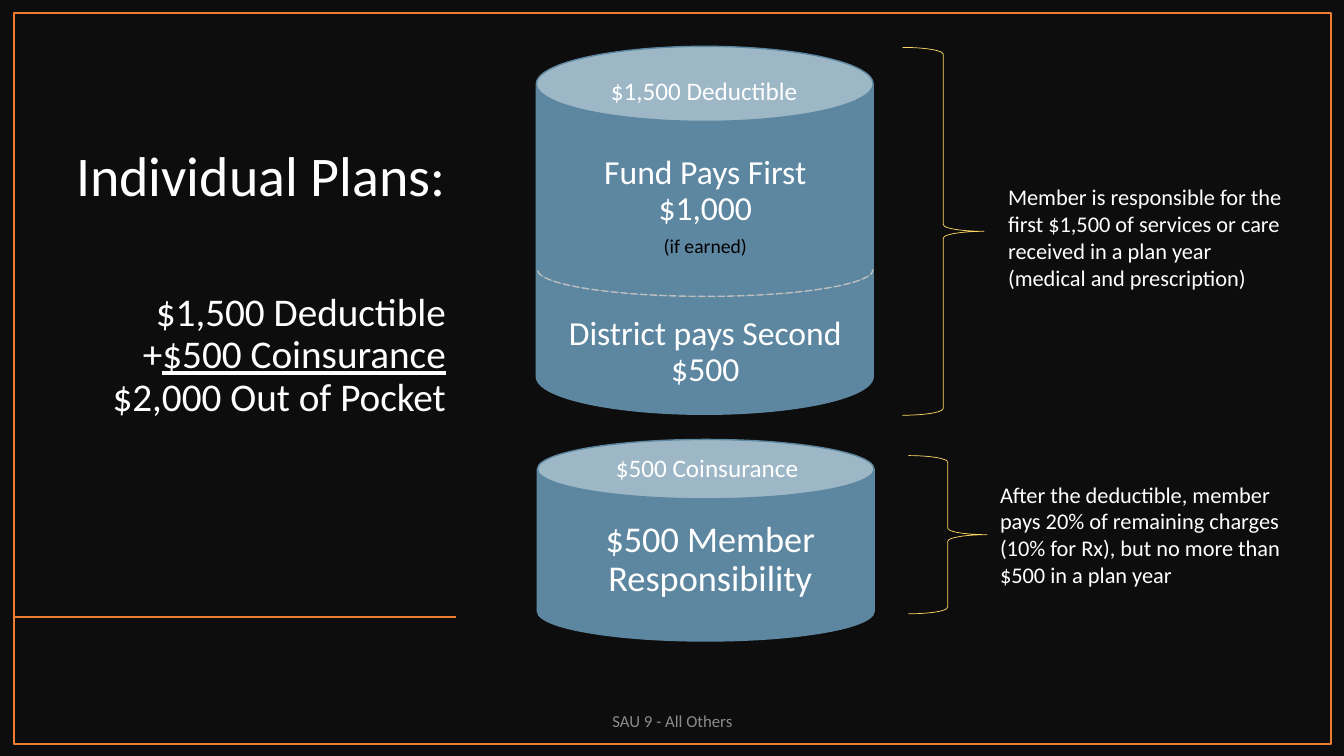
from pptx import Presentation
from pptx.dml.color import RGBColor
from pptx.enum.dml import MSO_LINE
from pptx.enum.shapes import MSO_CONNECTOR, MSO_SHAPE
from pptx.enum.text import MSO_ANCHOR, PP_ALIGN
from pptx.util import Inches, Pt
from lxml import etree

COLORS = {
    "night": "0D0D0D",
    "white": "FFFFFF",
    "black": "000000",
    "orange": "ED7D31",
    "steel": "5D87A1",
    "gold": "FFD966",
    "silver": "BFBFBF",
    "gray": "8C8C8C",
}

prs = Presentation()
prs.slide_width, prs.slide_height = Inches(13.33), Inches(7.5)
slide = prs.slides.add_slide(prs.slide_layouts[6])


def add_outline(kind, box, fill=None, line=None, width=1):
    shape = slide.shapes.add_shape(kind, *map(Inches, box))
    shape.shadow.inherit = False
    if fill:
        shape.fill.solid()
        shape.fill.fore_color.rgb = RGBColor.from_string(COLORS[fill])
    else:
        shape.fill.background()
    if line:
        shape.line.color.rgb = RGBColor.from_string(COLORS[line])
        shape.line.width = Pt(width)
    else:
        shape.line.fill.background()
    return shape


def add_text(box, lines, align=PP_ALIGN.LEFT, anchor=MSO_ANCHOR.TOP):
    frame = slide.shapes.add_textbox(*map(Inches, box)).text_frame
    frame.word_wrap = True
    frame.vertical_anchor = anchor
    for index, (text, size, color, spacing, after) in enumerate(lines):
        paragraph = frame.paragraphs[0] if index == 0 else frame.add_paragraph()
        paragraph.text = text
        paragraph.alignment = align
        paragraph.line_spacing = spacing
        paragraph.space_after = Pt(after)
        paragraph.font.name = "Calibri"
        paragraph.font.size = Pt(size)
        paragraph.font.color.rgb = RGBColor.from_string(COLORS[color])
    return frame


add_outline(MSO_SHAPE.RECTANGLE, (0, 0, 13.33, 7.5), fill="night")

plan_summary = add_text((0.63, 1.42, 3.89, 2.85), [
    ("Individual Plans:", 40, "white", 0.9, 60),
    ("$1,500 Deductible", 28, "white", 0.9, 0),
    ("+", 28, "white", 0.9, 0),
    ("$2,000 Out of Pocket", 28, "white", 0.9, 0),
], PP_ALIGN.RIGHT)
coinsurance = plan_summary.paragraphs[2].add_run()
coinsurance.text = "$500 Coinsurance"
coinsurance.font.underline = True

divider = slide.shapes.add_connector(
    MSO_CONNECTOR.STRAIGHT, Inches(4.52), Inches(6.12), Inches(0.14), Inches(6.12))
divider.line.color.rgb = RGBColor.from_string(COLORS["orange"])
divider.line.width = Pt(1)
etree.SubElement(
    divider.element.spPr,
    "{http://schemas.openxmlformats.org/drawingml/2006/main}effectLst")

add_outline(MSO_SHAPE.RECTANGLE, (0.14, 0.13, 13.06, 7.25), line="orange")

for can_box, lid, brace_box in [
    ((5.33, 4.36, 3.34, 2), 0.295, (9.01, 4.52, 0.78, 1.57)),
    ((5.32, 0.46, 3.34, 3.65), 0.223, (8.95, 0.47, 0.81, 3.65)),
]:
    can = add_outline(MSO_SHAPE.CAN, can_box, "steel", "steel")
    can.adjustments[0] = lid
    add_outline(MSO_SHAPE.RIGHT_BRACE, brace_box, line="gold", width=0.5)

payer_split = add_outline(
    MSO_SHAPE.BLOCK_ARC, (5.33, 2.41, 3.33, 0.53), "white", "silver")
for index, value in enumerate((108, 0, 0)):
    payer_split.adjustments[index] = value
payer_split.rotation = 180
payer_split.line.dash_style = MSO_LINE.DASH

for box, label in [
    ((5.96, 0.7, 2.06, 0.4), "$1,500 Deductible"),
    ((6.01, 4.44, 2.06, 0.4), "$500 Coinsurance"),
]:
    add_text(box, [(label, 18, "white", 1, 0)])

for box, lines in [
    ((5.6, 1.45, 2.79, 1.31), [
        ("Fund Pays First", 24, "white", 1, 0),
        ("$1,000", 24, "white", 0.9, 6),
        ("(if earned)", 14, "black", 0.9, 6),
    ]),
    ((5.39, 3.09, 3.21, 0.63), [("District pays Second\n$500", 24, "white", 0.9, 6)]),
    ((5.84, 5.12, 2.41, 0.95), [("$500 Member Responsibility", 25.9, "white", 0.9, 6)]),
]:
    add_text(box, lines, PP_ALIGN.CENTER)

for box, note in [
    ((9.9, 1.77, 2.93, 1.18),
     "Member is responsible for the first $1,500 of services or care "
     "received in a plan year (medical and prescription)"),
    ((9.82, 4.72, 3.06, 1.18),
     "After the deductible, member pays 20% of remaining charges "
     "(10% for Rx), but no more than $500 in a plan year"),
]:
    add_text(box, [(note, 16, "white", 1, 0)])

add_text((4.42, 6.95, 4.5, 0.4), [("SAU 9 - All Others", 12, "gray", 1, 0)],
         PP_ALIGN.CENTER, MSO_ANCHOR.MIDDLE)

prs.save("out.pptx")
